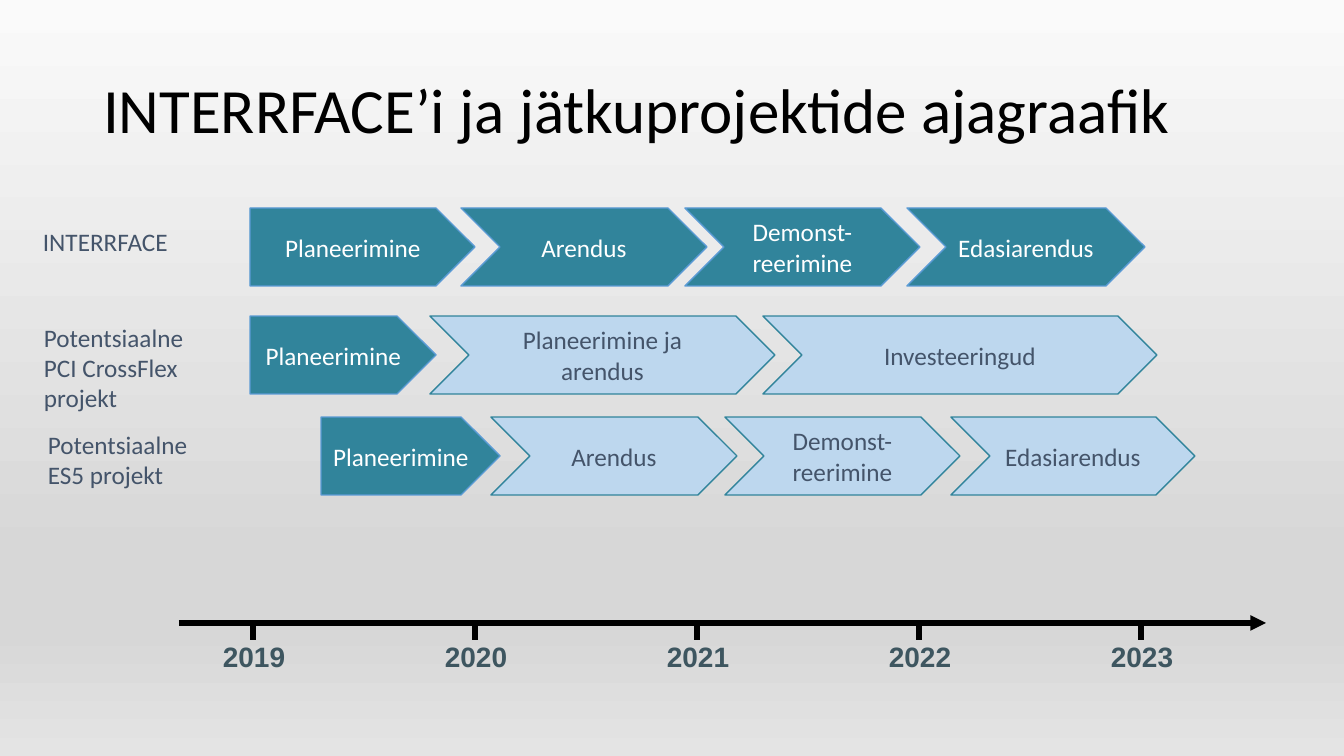
from copy import deepcopy

from lxml.etree import SubElement
from pptx import Presentation
from pptx.dml.color import RGBColor
from pptx.enum.shapes import MSO_CONNECTOR, MSO_SHAPE
from pptx.enum.text import MSO_ANCHOR, MSO_AUTO_SIZE, PP_ALIGN
from pptx.oxml.ns import qn
from pptx.util import Pt

PX = 914400 / 100.8
COLORS = {
    "black": "000000", "white": "FFFFFF", "slate": "44546A", "year": "3E5660",
    "teal": "31849B", "blue": "5B9BD5", "pale": "BDD7EE",
}
BACKGROUND = [(0, "FAFAFA"), (0.74, "D7D7D7"), (0.83, "D7D7D7"), (1, "E4E4E4")]
FONTS = {
    "title": {"name": "Calibri", "size": Pt(45)},
    "body": {"name": "Calibri", "size": Pt(18)},
    "year": {"name": "Arial", "size": Pt(20), "bold": True},
}
STYLES = {
    "current": {"fill": "teal", "line": "blue", "text": "white"},
    "planned": {"fill": "pale", "line": "teal", "text": "slate"},
}
PROJECTS = [
    ("INTERRFACE", (33, 221, 146, 40), 208, [
        (250, 225, "Planeerimine", "current"),
        (461, 246, "Arendus", "current"),
        (685, 235, "Demonst-reerimine", "current"),
        (907, 238, "Edasiarendus", "current"),
    ]),
    ("Potentsiaalne\nPCI CrossFlex\nprojekt", (34, 317, 161, 102), 316, [
        (250, 186, "Planeerimine", "current"),
        (430, 345, "Planeerimine ja arendus", "planned"),
        (763, 394, "Investeeringud", "planned"),
    ]),
    ("Potentsiaalne\nES5 projekt", (38, 424, 167, 72), 417, [
        (321, 179, "Planeerimine", "current"),
        (491, 246, "Arendus", "planned"),
        (725, 235, "Demonst-reerimine", "planned"),
        (951, 244, "Edasiarendus", "planned"),
    ]),
]
PHASE_HEIGHT = 78
YEARS = range(2019, 2024)


def px(*lengths):
    return [round(length * PX) for length in lengths]


def rgb(name):
    return RGBColor.from_string(COLORS[name])


def write(frame, text, font, color, align=PP_ALIGN.LEFT):
    frame.text = text
    for paragraph in frame.paragraphs:
        paragraph.alignment = align
        for attribute, value in FONTS[font].items():
            setattr(paragraph.font, attribute, value)
        paragraph.font.color.rgb = rgb(color)


def paint_background(slide):
    fill = slide.background.fill
    fill.gradient()
    fill.gradient_angle = 270
    stops = slide.element.find(".//" + qn("a:gsLst"))
    for _ in range(len(BACKGROUND) - len(stops)):
        stops.append(deepcopy(stops[0]))
    for stop, (position, color) in zip(fill.gradient_stops, BACKGROUND):
        stop.position = position
        stop.color.rgb = RGBColor.from_string(color)


def set_title(slide, box, text):
    title = slide.shapes.title
    for attribute, value in zip(("left", "top", "width", "height"), px(*box)):
        setattr(title, attribute, value)
    frame = title.text_frame
    write(frame, text, "title", "black")
    frame.vertical_anchor = MSO_ANCHOR.MIDDLE
    frame.auto_size = MSO_AUTO_SIZE.NONE
    frame.paragraphs[0].line_spacing = 0.9


def add_label(slide, box, text, font, color, align=PP_ALIGN.LEFT, wrap=False):
    frame = slide.shapes.add_textbox(*px(*box)).text_frame
    frame.word_wrap = wrap
    frame.auto_size = MSO_AUTO_SIZE.SHAPE_TO_FIT_TEXT
    write(frame, text, font, color, align)


def add_phase(slide, box, outline, text, style):
    phase = slide.shapes.add_shape(outline, *px(*box))
    phase.shadow.inherit = False
    phase.fill.solid()
    phase.fill.fore_color.rgb = rgb(style["fill"])
    phase.line.color.rgb = rgb(style["line"])
    phase.line.width = Pt(1)
    phase.text_frame.vertical_anchor = MSO_ANCHOR.MIDDLE
    write(phase.text_frame, text, "body", style["text"], PP_ALIGN.CENTER)


def add_project(slide, label, label_box, top, phases):
    add_label(slide, label_box, label, "body", "slate")
    for index, (left, width, text, status) in enumerate(phases):
        outline = MSO_SHAPE.CHEVRON if index else MSO_SHAPE.PENTAGON
        add_phase(slide, (left, top, width, PHASE_HEIGHT), outline, text, STYLES[status])


def add_line(slide, ends, weight):
    line = slide.shapes.add_connector(MSO_CONNECTOR.STRAIGHT, *px(*ends))
    line.line.color.rgb = rgb("black")
    line.line.width = Pt(weight)
    SubElement(line.element.spPr, qn("a:effectLst"))
    return line


def add_time_axis(slide, box):
    left, top, width, height = box
    first_tick, pitch, year_width, year_height = left + 74, 222, 86, 44
    axis = add_line(slide, (left, top, left + width, top), 3.75)
    SubElement(axis.line._get_or_add_ln(), qn("a:tailEnd"), type="triangle")
    for index, year in enumerate(YEARS):
        tick = first_tick + index * pitch
        add_line(slide, (tick, top + 1, tick, top + 17), 4)
        year_box = (tick + 1 - year_width // 2, top + height - year_height,
                    year_width, year_height)
        add_label(slide, year_box, str(year), "year", "year", PP_ALIGN.CENTER, True)


def main():
    presentation = Presentation()
    presentation.slide_width, presentation.slide_height = px(1344, 756)
    slide = presentation.slides.add_slide(presentation.slide_layouts[5])
    paint_background(slide)
    set_title(slide, (93, 40, 1159, 146), "INTERRFACE’i ja jätkuprojektide ajagraafik")
    for project in PROJECTS:
        add_project(slide, *project)
    add_time_axis(slide, (179, 623, 1087, 56))
    presentation.save("out.pptx")


if __name__ == "__main__":
    main()
